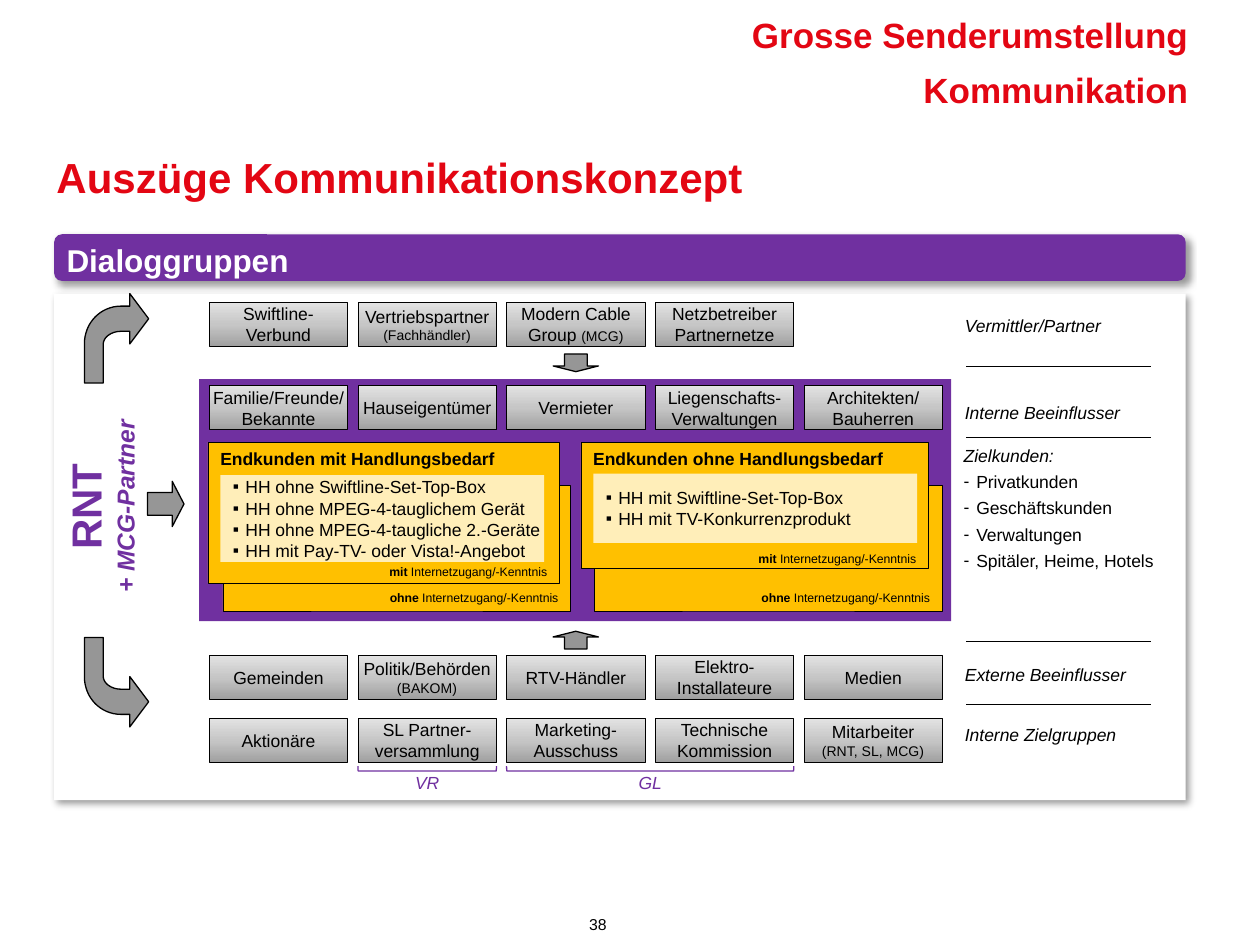
from copy import deepcopy
from dataclasses import dataclass

from lxml.etree import SubElement
from pptx import Presentation
from pptx.dml.color import RGBColor
from pptx.enum.dml import MSO_LINE
from pptx.enum.shapes import MSO_CONNECTOR, MSO_SHAPE as Shape
from pptx.enum.text import MSO_ANCHOR as Anchor, PP_ALIGN as Align
from pptx.oxml.ns import qn
from pptx.util import Inches, Pt

RED = RGBColor(0xE3, 0x06, 0x13)
PURPLE = RGBColor(0x70, 0x30, 0xA0)
AMBER = RGBColor(0xFF, 0xC0, 0x00)
CREAM = RGBColor(0xFF, 0xEE, 0xB9)
GREY = RGBColor(0x96, 0x96, 0x96)
BLACK = RGBColor(0, 0, 0)
WHITE = RGBColor(0xFF, 0xFF, 0xFF)
BOX_SHADES = ((0, RGBColor(0xA0, 0xA0, 0xA0)), (0.5, RGBColor(0xC6, 0xC6, 0xC6)),
              (1, RGBColor(0xE3, 0xE3, 0xE3)))


@dataclass
class Run:
    text: str
    size: float | None = None
    bold: bool | None = None


@dataclass
class Para:
    runs: list[Run]
    size: float = 10
    bold: bool = False
    italic: bool = False
    color: RGBColor = BLACK
    align: Align = Align.LEFT
    before: float = 0
    bullet: str = ""


@dataclass
class CustomerGroup:
    """End customers: a front card, a card behind it and a list of traits."""
    title: str
    traits: list[str]
    front: tuple
    back: tuple
    panel: tuple
    footer_gap: float


def line_of(text: str, **style) -> Para:
    return Para([Run(text)], **style)


def write(shape, paras: list[Para], anchor=Anchor.TOP, wrap: bool = True) -> None:
    frame = shape.text_frame
    frame.word_wrap, frame.vertical_anchor = wrap, anchor
    for i, para in enumerate(paras):
        p = frame.paragraphs[0] if i == 0 else frame.add_paragraph()
        p.alignment, p.space_before = para.align, Pt(para.before)
        if para.bullet:
            props = p._p.get_or_add_pPr()
            props.set("marL", str(Inches(0.1)))
            props.set("indent", str(-Inches(0.1)))
            SubElement(props, qn("a:buFont"), typeface="Arial")
            SubElement(props, qn("a:buChar"), char=para.bullet)
        font = p.font
        font.name, font.size, font.italic = "Arial", Pt(para.size), para.italic
        font.bold, font.color.rgb = para.bold, para.color
        for part in para.runs:
            run = p.add_run()
            run.text = part.text
            if part.size:
                run.font.size = Pt(part.size)
            if part.bold is not None:
                run.font.bold = part.bold


def add_text(slide, at: tuple, paras: list[Para], anchor=Anchor.TOP):
    box = slide.shapes.add_textbox(*map(Inches, at))
    write(box, paras, anchor)
    return box


def paint(shape, fill=None, line=None, width: float = 0.25) -> None:
    shape.shadow.inherit = False
    if fill is None:
        shape.fill.background()
    else:
        shape.fill.solid()
        shape.fill.fore_color.rgb = fill
    if line is None:
        shape.line.fill.background()
    else:
        shape.line.color.rgb, shape.line.width = line, Pt(width)


def add_shape(slide, kind, at: tuple, fill=None, line=None, width: float = 0.25):
    shape = slide.shapes.add_shape(kind, *map(Inches, at))
    paint(shape, fill, line, width)
    return shape


def add_shadow(shape) -> None:
    effects = shape._element.spPr.find(qn("a:effectLst"))
    shadow = SubElement(effects, qn("a:outerShdw"), blurRad=str(Pt(4)), dist=str(Pt(3)),
                        dir="2700000", algn="tl", rotWithShape="0")
    color = SubElement(shadow, qn("a:srgbClr"), val="000000")
    SubElement(color, qn("a:alpha"), val="40000")


def add_group_box(slide, left: float, top: float, label: str) -> None:
    box = add_shape(slide, Shape.RECTANGLE, (left, top, 1.1, 0.35), WHITE, BLACK)
    box.fill.gradient()
    box.fill.gradient_angle = 90
    stops = box._element.spPr.find(qn("a:gradFill")).find(qn("a:gsLst"))
    stops.append(deepcopy(stops[-1]))
    for stop, (position, shade) in zip(box.fill.gradient_stops, BOX_SHADES):
        stop.position, stop.color.rgb = position, shade
    paras = []
    for text in label.split("\n"):
        name, bracket, note = text.partition("(")
        runs = [Run(name)] if name else []
        if bracket:
            runs.append(Run(bracket + note, 8))
        paras.append(Para(runs, align=Align.CENTER))
    write(box, paras, Anchor.MIDDLE, wrap=False)


def add_block_arrow(slide, at: tuple, rotation: float = 0) -> None:
    arrow = add_shape(slide, Shape.RIGHT_ARROW, at, GREY, BLACK, 0.75)
    arrow.adjustments[1] = 0.322
    arrow.rotation = rotation


def curve(a: tuple, b: tuple, c: tuple, d: tuple, steps: int = 16) -> list[tuple]:
    weights = [((1 - t) ** 3, 3 * t * (1 - t) ** 2, 3 * t * t * (1 - t), t ** 3)
               for t in (i / steps for i in range(steps + 1))]
    return [tuple(sum(w * q[k] for w, q in zip(ws, (a, b, c, d))) for k in (0, 1))
            for ws in weights]


def add_bent_arrow(slide, tip_y: float, direction: int) -> None:
    """Bent arrow with its tip at tip_y; its tail runs down (1) or up (-1)."""
    outline = [(1.18, 0), (1.03, -0.2), (1.03, -0.1),
               *curve((0.96, -0.1), (0.8, -0.1), (0.67, 0.03), (0.67, 0.2)),
               (0.67, 0.51), (0.82, 0.51),
               *curve((0.82, 0.2), (0.82, 0.15), (0.88, 0.1), (0.96, 0.1)),
               (1.03, 0.1), (1.03, 0.2)]
    points = [(Inches(x), Inches(tip_y + direction * y)) for x, y in outline]
    builder = slide.shapes.build_freeform(*points[0], scale=1.0)
    builder.add_line_segments(points[1:], close=True)
    paint(builder.convert_to_shape(), GREY, BLACK, 0.75)


def add_divider(slide, y: float) -> None:
    divider = slide.shapes.add_connector(
        MSO_CONNECTOR.STRAIGHT, Inches(7.67), Inches(y), Inches(9.13), Inches(y))
    divider.line.color.rgb, divider.line.width = BLACK, Pt(0.25)
    divider.line.dash_style = MSO_LINE.ROUND_DOT
    SubElement(divider._element.spPr, qn("a:effectLst"))


def add_bracket(slide, left: float, width: float, label: str) -> None:
    bracket = add_shape(slide, Shape.RIGHT_BRACKET,
                        (left + width / 2 - 0.02, 6.1 - width / 2, 0.04, width),
                        line=PURPLE, width=0.75)
    bracket.rotation = 90
    add_text(slide, (left, 6.08, width, 0.27),
             [line_of(label, italic=True, color=PURPLE, align=Align.CENTER)])


def add_customers(slide, group: CustomerGroup) -> None:
    def access(word: str, before: float = 0) -> Para:
        return Para([Run(word, bold=True), Run(" Internetzugang/-Kenntnis", bold=False)],
                    size=7, align=Align.RIGHT, before=before)

    back = add_shape(slide, Shape.RECTANGLE, group.back, AMBER, BLACK)
    write(back, [access("ohne")], Anchor.BOTTOM, wrap=False)
    front = add_shape(slide, Shape.RECTANGLE, group.front, AMBER, BLACK)
    write(front, [line_of(group.title, bold=True), access("mit", group.footer_gap)], wrap=False)
    panel = add_shape(slide, Shape.RECTANGLE, group.panel, CREAM)
    write(panel, [line_of(t, bullet="▪") for t in group.traits], Anchor.MIDDLE, wrap=False)


GROUP_ROWS = {
    2.4: ["Swiftline-\nVerbund", "Vertriebspartner\n(Fachhändler)",
          "Modern Cable\nGroup (MCG)", "Netzbetreiber\nPartnernetze"],
    3.06: ["Familie/Freunde/\nBekannte", "Hauseigentümer", "Vermieter",
           "Liegenschafts-\nVerwaltungen", "Architekten/\nBauherren"],
    5.2: ["Gemeinden", "Politik/Behörden\n(BAKOM)", "RTV-Händler",
          "Elektro-\nInstallateure", "Medien"],
    5.7: ["Aktionäre", "SL Partner-\nversammlung", "Marketing-\nAusschuss",
          "Technische\nKommission", "Mitarbeiter\n(RNT, SL, MCG)"],
}
CUSTOMERS = [
    CustomerGroup("Endkunden mit Handlungsbedarf",
                  ["HH ohne Swiftline-Set-Top-Box", "HH ohne MPEG-4-tauglichem Gerät",
                   "HH ohne MPEG-4-taugliche 2.-Geräte", "HH mit Pay-TV- oder Vista!-Angebot"],
                  (1.65, 3.51, 2.79, 1.12), (1.77, 3.85, 2.76, 1), (1.75, 3.77, 2.57, 0.69), 54),
    CustomerGroup("Endkunden ohne Handlungsbedarf",
                  ["HH mit Swiftline-Set-Top-Box", "HH mit TV-Konkurrenzprodukt"],
                  (4.61, 3.51, 2.76, 1), (4.72, 3.85, 2.76, 1), (4.71, 3.76, 2.57, 0.55), 47),
]
ROW_LABELS = {2.45: "Vermittler/Partner", 3.14: "Interne Beeinflusser",
              5.22: "Externe Beeinflusser", 5.7: "Interne Zielgruppen"}
TARGETS = ["Privatkunden", "Geschäftskunden", "Verwaltungen", "Spitäler, Heime, Hotels"]


def main() -> None:
    deck = Presentation()
    deck.slide_width, deck.slide_height = Inches(10), Inches(7.5)
    slide = deck.slides.add_slide(deck.slide_layouts[6])

    # Headings and page number
    for top, text in ((0.05, "Grosse Senderumstellung"), (0.49, "Kommunikation")):
        add_text(slide, (4.29, top, 5.24, 0.44),
                 [line_of(text, size=20, bold=True, color=RED, align=Align.RIGHT)], Anchor.MIDDLE)
    add_text(slide, (0.35, 1.13, 9.06, 0.55),
             [line_of("Auszüge Kommunikationskonzept", size=24, bold=True, color=RED)],
             Anchor.MIDDLE)
    add_text(slide, (3.58, 7.19, 2.33, 0.29),
             [line_of("38", size=9, align=Align.CENTER)], Anchor.MIDDLE)

    # Banner, white panel and purple core
    add_shadow(add_shape(slide, Shape.ROUNDED_RECTANGLE, (0.43, 1.86, 8.98, 0.37), PURPLE))
    add_text(slide, (0.43, 1.88, 8.9, 0.37),
             [line_of("Dialoggruppen", size=18, bold=True, color=WHITE)], Anchor.MIDDLE)
    add_shadow(add_shape(slide, Shape.RECTANGLE, (0.43, 2.33, 8.98, 4.02), WHITE))
    add_shape(slide, Shape.RECTANGLE, (1.58, 3.01, 5.97, 1.92), PURPLE)

    # Sender and arrows
    sender = add_text(slide, (-0.04, 3.65, 1.67, 0.74), [
        line_of("RNT", size=24, bold=True, color=PURPLE, align=Align.CENTER),
        line_of("+ MCG-Partner", size=14, bold=True, italic=True, color=PURPLE,
                align=Align.CENTER)])
    sender.rotation = 270
    add_bent_arrow(slide, 2.53, 1)
    add_bent_arrow(slide, 5.57, -1)
    add_block_arrow(slide, (1.17, 3.82, 0.29, 0.36))
    add_block_arrow(slide, (4.5, 2.7, 0.14, 0.36), 90)
    add_block_arrow(slide, (4.5, 4.9, 0.14, 0.36), 270)

    # Dialogue groups
    for top, labels in GROUP_ROWS.items():
        for column, label in enumerate(labels):
            add_group_box(slide, 1.66 + 1.18 * column, top, label)
    for group in CUSTOMERS:
        add_customers(slide, group)
    add_bracket(slide, 2.84, 1.1, "VR")
    add_bracket(slide, 4.02, 2.28, "GL")

    # Row labels
    for top, label in ROW_LABELS.items():
        add_text(slide, (7.56, top, 1.73, 0.27), [line_of(label, italic=True)])
    add_text(slide, (7.55, 3.48, 2, 1.11), [line_of("Zielkunden:", italic=True)]
             + [line_of(t, before=3, bullet="-") for t in TARGETS])
    for y in (2.91, 3.47, 5.09, 5.59):
        add_divider(slide, y)

    deck.save("out.pptx")


if __name__ == "__main__":
    main()
